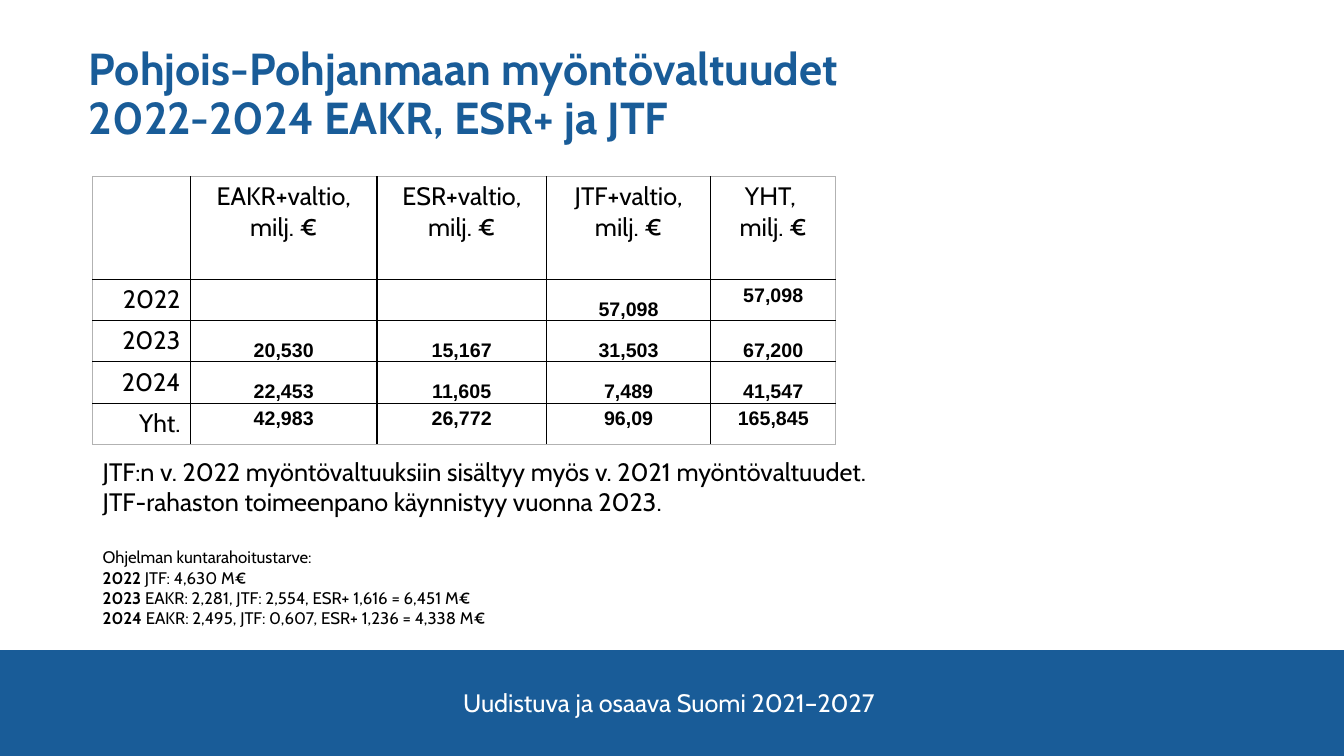
from lxml.etree import SubElement
from pptx import Presentation
from pptx.dml.color import RGBColor
from pptx.enum.shapes import MSO_SHAPE
from pptx.enum.text import MSO_ANCHOR, MSO_AUTO_SIZE, PP_ALIGN
from pptx.oxml.ns import qn
from pptx.util import Inches, Pt

BLUE, BLACK, WHITE, GREY = "195C98", "000000", "FFFFFF", "B2B2B2"
COLUMN_WIDTHS = [0.97, 1.85, 1.68, 1.63, 1.24]
ROW_HEIGHTS = [1.02] + [0.41] * 4
GRANTS = [
    ["", "EAKR+valtio, milj. €", "ESR+valtio, milj. €", "JTF+valtio, milj. €", "YHT, \vmilj. €"],
    ["2022", "", "", "57,098", "57,098"],
    ["2023", "20,530", "15,167", "31,503", "67,200"],
    ["2024", "22,453", "11,605", "7,489", "41,547"],
    ["Yht.", "42,983", "26,772", "96,09", "165,845"],
]
REMARKS = [
    "JTF:n v. 2022 myöntövaltuuksiin sisältyy myös v. 2021 myöntövaltuudet.",
    "JTF-rahaston toimeenpano käynnistyy vuonna 2023.",
]
FUNDING_HEADING = "Ohjelman kuntarahoitustarve:"
FUNDING_NEEDS = [
    ("2022", " JTF: 4,630 M€"),
    ("2023", " EAKR: 2,281, JTF: 2,554, ESR+ 1,616 = 6,451 M€"),
    ("2024", " EAKR: 2,495, JTF: 0,607, ESR+ 1,236 = 4,338 M€"),
]


def color(value):
    return RGBColor.from_string(value)


def style(paragraph, size, ink=BLACK, bold=False, face="Cabin", align=PP_ALIGN.LEFT):
    paragraph.alignment = align
    for run in paragraph.runs:
        run.font.name = face
        run.font.size = Pt(size)
        run.font.bold = bold
        run.font.color.rgb = color(ink)


def set_margins(frame, left, top, right, bottom):
    frame.margin_left, frame.margin_top = Inches(left), Inches(top)
    frame.margin_right, frame.margin_bottom = Inches(right), Inches(bottom)


def add_footer(slide, left, top, width, height):
    band = slide.shapes.add_shape(
        MSO_SHAPE.RECTANGLE, Inches(left), Inches(top), Inches(width), Inches(height))
    band.shadow.inherit = False
    band.fill.solid()
    band.fill.fore_color.rgb = color(BLUE)
    band.line.fill.background()

    programme = slide.shapes.add_textbox(
        Inches(left + 2.98), Inches(top + 0.32), Inches(7.31), Inches(0.4))
    programme.text_frame.word_wrap = True
    programme.text_frame.text = "Uudistuva ja osaava Suomi 2021–2027"
    style(programme.text_frame.paragraphs[0], 18, WHITE, align=PP_ALIGN.CENTER)


def set_title(slide, left, top, width, height):
    title = slide.shapes.title
    title.left, title.top = Inches(left), Inches(top)
    title.width, title.height = Inches(width), Inches(height)
    frame = title.text_frame
    frame.text = "Pohjois-Pohjanmaan myöntövaltuudet \v2022-2024 EAKR, ESR+ ja JTF"
    frame.word_wrap = True
    frame.auto_size = MSO_AUTO_SIZE.NONE
    frame.vertical_anchor = MSO_ANCHOR.BOTTOM
    set_margins(frame, 0, 0, 0, 0)
    frame.paragraphs[0].line_spacing = 0.9
    style(frame.paragraphs[0], 32, BLUE, bold=True)


def add_borders(cell, outer_sides):
    """Draw black inner rules and a faint outer frame."""
    properties = cell._tc.get_or_add_tcPr()
    for side in "LRTB":
        ink, points = (GREY, 0.5) if side in outer_sides else (BLACK, 1)
        line = SubElement(properties, qn(f"a:ln{side}"), w=str(Pt(points)))
        fill = SubElement(line, qn("a:solidFill"))
        SubElement(fill, qn("a:srgbClr"), val=ink)


def add_grants_table(slide, left, top):
    rows, columns = len(GRANTS), len(COLUMN_WIDTHS)
    table = slide.shapes.add_table(
        rows, columns, Inches(left), Inches(top),
        Inches(sum(COLUMN_WIDTHS)), Inches(sum(ROW_HEIGHTS))).table
    table.first_row = table.horz_banding = False
    for column, width in zip(table.columns, COLUMN_WIDTHS):
        column.width = Inches(width)
    for row, height in zip(table.rows, ROW_HEIGHTS):
        row.height = Inches(height)

    for r, values in enumerate(GRANTS):
        for c, value in enumerate(values):
            cell = table.cell(r, c)
            edges = {"L": c == 0, "R": c == columns - 1, "T": r == 0, "B": r == rows - 1}
            add_borders(cell, [side for side, is_outer in edges.items() if is_outer])
            cell.fill.background()
            cell.text = value
            paragraph = cell.text_frame.paragraphs[0]
            if r == 0:
                style(paragraph, 18, align=PP_ALIGN.CENTER)
            elif c == 0:
                style(paragraph, 18, align=PP_ALIGN.RIGHT)
            else:
                style(paragraph, 14, bold=True, face="Arial", align=PP_ALIGN.CENTER)
                # Yearly amounts sit on the row's lower rule; totals stay at the top
                if value and r < rows - 1 and (r, c) != (1, columns - 1):
                    cell.vertical_anchor = MSO_ANCHOR.BOTTOM
                    set_margins(cell, 0.01, 0.01, 0.01, 0)


def add_notes(slide, left, top, width, height):
    notes = slide.shapes.add_textbox(
        Inches(left), Inches(top), Inches(width), Inches(height))
    frame = notes.text_frame
    frame.word_wrap = True
    frame.text = "\n".join(REMARKS)
    for remark in frame.paragraphs:
        style(remark, 18)

    # Municipal funding needs
    heading = frame.add_paragraph()
    heading.text = FUNDING_HEADING
    heading.space_before = Pt(21.5)
    style(heading, 12)
    for year, need in FUNDING_NEEDS:
        paragraph = frame.add_paragraph()
        for part in (year, need):
            paragraph.add_run().text = part
        style(paragraph, 12)
        paragraph.runs[0].font.bold = True


def main():
    deck = Presentation()
    deck.slide_width, deck.slide_height = Inches(13.33), Inches(7.5)
    slide = deck.slides.add_slide(deck.slide_layouts[5])
    add_footer(slide, 0, 6.45, 13.33, 1.05)
    set_title(slide, 0.88, 0.2, 11.5, 1.23)
    add_grants_table(slide, 0.92, 1.75)
    add_notes(slide, 0.92, 4.48, 12.33, 1.82)
    deck.save("out.pptx")


if __name__ == "__main__":
    main()
